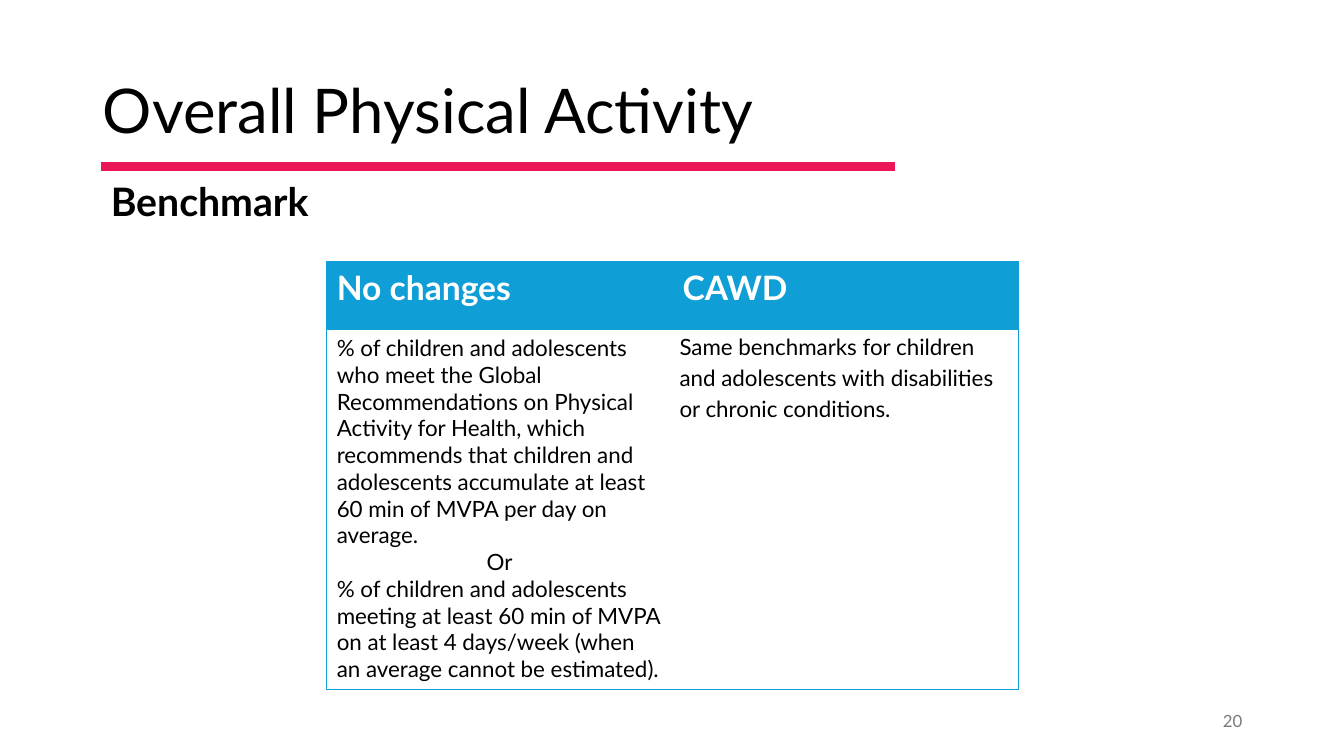
from lxml import etree
from pptx import Presentation
from pptx.dml.color import RGBColor
from pptx.enum.shapes import MSO_CONNECTOR
from pptx.enum.text import MSO_ANCHOR, PP_ALIGN
from pptx.oxml.ns import qn
from pptx.util import Inches, Pt

STRAIGHT = MSO_CONNECTOR.STRAIGHT
MIDDLE, TOP = MSO_ANCHOR.MIDDLE, MSO_ANCHOR.TOP
LEFT, CENTER, RIGHT = PP_ALIGN.LEFT, PP_ALIGN.CENTER, PP_ALIGN.RIGHT
TITLE_ONLY = 5
FONT = "Lato"
COLORS = {"black": "000000", "white": "FFFFFF", "gray": "797979",
          "pink": "EA1656", "blue": "0F9ED5"}

HEADS = ["No changes", "CAWD"]
GLOBAL = [
    ("% of children and adolescents who meet the Global Recommendations on "
     "Physical Activity for Health, which recommends that children and "
     "adolescents accumulate at least 60 min of MVPA per day on average.", LEFT),
    ("Or", CENTER),
    ("% of children and adolescents meeting at least 60 min of MVPA on at "
     "least 4 days/week (when an average cannot be estimated).", LEFT),
]
CAWD = ("Same benchmarks for children and adolescents with disabilities "
        "or chronic conditions.")


def color(name):
    return RGBColor.from_string(COLORS[name])


def write(para, text, size=16, ink="black", bold=False, align=LEFT,
          space=None, after=None):
    para.alignment = align
    if space is not None:
        para.line_spacing = space
    if after is not None:
        para.space_after = Pt(after)
    run = para.add_run()
    run.text = text
    font = run.font
    font.name, font.size, font.bold = FONT, Pt(size), bold
    font.color.rgb = color(ink)


def edge(cell, pos, side, ink=None):
    """Draw one side of a cell, or clear it when no ink is given."""
    line = etree.Element(qn("a:ln" + side), w=str(Pt(1)))
    if ink:
        fill = etree.SubElement(line, qn("a:solidFill"))
        etree.SubElement(fill, qn("a:srgbClr"), val=COLORS[ink])
    else:
        etree.SubElement(line, qn("a:noFill"))
    cell._tc.get_or_add_tcPr().insert(pos, line)


class Page:
    def __init__(self, deck):
        self.slide = deck.slides.add_slide(deck.slide_layouts[TITLE_ONLY])
        self.shapes = self.slide.shapes

    def title(self, text, x, y, w, h):
        shape = self.shapes.title
        shape.left, shape.top = Inches(x), Inches(y)
        shape.width, shape.height = Inches(w), Inches(h)
        shape.text_frame.vertical_anchor = MIDDLE
        write(shape.text_frame.paragraphs[0], text, size=44, space=0.9)

    def text(self, text, x, y, w, h, anchor=TOP, **style):
        box = self.shapes.add_textbox(Inches(x), Inches(y), Inches(w), Inches(h))
        frame = box.text_frame
        frame.word_wrap = True
        frame.vertical_anchor = anchor
        write(frame.paragraphs[0], text, **style)

    def rule(self, x, y, end, ink, width):
        line = self.shapes.add_connector(
            STRAIGHT, Inches(x), Inches(y), Inches(end), Inches(y))
        line.line.color.rgb = color(ink)
        line.line.width = Pt(width)
        etree.SubElement(line._element.spPr, qn("a:effectLst"))

    def table(self, x, y, cols, rows):
        frame = self.shapes.add_table(
            len(rows), len(cols), Inches(x), Inches(y),
            Inches(sum(cols)), Inches(sum(rows)))
        grid = frame.table
        grid.horz_banding = False
        for col, width in zip(grid.columns, cols):
            col.width = Inches(width)
        for r, height in enumerate(rows):
            grid.rows[r].height = Inches(height)
            for c in range(len(cols)):
                cell = grid.cell(r, c)
                cell.fill.solid()
                cell.fill.fore_color.rgb = color("white" if r else "blue")
                inks = {"L": None if c else "blue",
                        "R": "blue" if c == len(cols) - 1 else None,
                        "T": "blue", "B": "blue"}
                for pos, (side, ink) in enumerate(inks.items()):
                    edge(cell, pos, side, ink)
        return grid


def main():
    deck = Presentation()
    deck.slide_width, deck.slide_height = Inches(13.33), Inches(7.5)
    page = Page(deck)
    page.title("Overall Physical Activity", 0.92, 0.4, 11.5, 1.45)
    page.text("20", 9.42, 6.95, 3, 0.4, anchor=MIDDLE,
              size=12, ink="gray", align=RIGHT)
    page.rule(1, 1.65, 8.88, "pink", 6)
    page.text("Benchmark", 1, 1.71, 2.81, 0.57, size=28, bold=True)

    grid = page.table(3.24, 2.6, [3.43, 3.43], [0.67, 3.57])
    for c, head in enumerate(HEADS):
        write(grid.cell(0, c).text_frame.paragraphs[0], head,
              size=24, ink="white", bold=True)

    frame = grid.cell(1, 0).text_frame
    for i, (text, align) in enumerate(GLOBAL):
        para = frame.add_paragraph() if i else frame.paragraphs[0]
        write(para, text, align=align)

    cell = grid.cell(1, 1)
    cell.margin_left = cell.margin_right = Inches(0.07)
    cell.margin_top = cell.margin_bottom = 0
    write(cell.text_frame.paragraphs[0], CAWD, space=1.16, after=8)
    deck.save("out.pptx")


if __name__ == "__main__":
    main()
